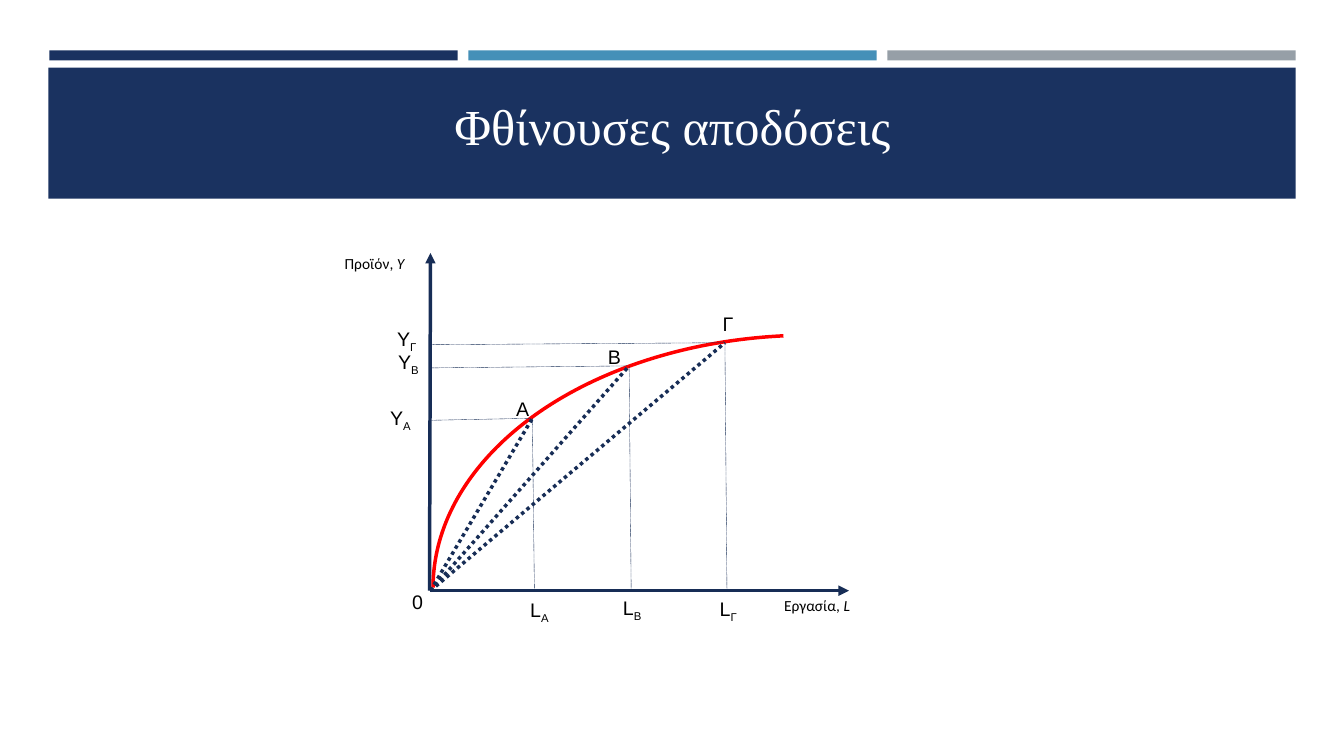
from lxml import etree
from pptx import Presentation
from pptx.dml.color import RGBColor
from pptx.enum.dml import MSO_LINE
from pptx.enum.shapes import MSO_CONNECTOR, MSO_SHAPE
from pptx.enum.text import MSO_ANCHOR, PP_ALIGN
from pptx.oxml.ns import qn
from pptx.util import Inches, Pt

NAVY = RGBColor(0x1A, 0x32, 0x60)
BLUE = RGBColor(0x45, 0x90, 0xB8)
GRAY = RGBColor(0x96, 0x9F, 0xA7)
INK = RGBColor(0x17, 0x2D, 0x56)
RED = RGBColor(0xFF, 0x00, 0x00)
BLACK = RGBColor(0x00, 0x00, 0x00)
WHITE = RGBColor(0xFF, 0xFF, 0xFF)
RECTANGLE, ARC = MSO_SHAPE.RECTANGLE, MSO_SHAPE.ARC
STRAIGHT = MSO_CONNECTOR.STRAIGHT
DOTS, DASHES = MSO_LINE.ROUND_DOT, MSO_LINE.SQUARE_DOT
LEFT, CENTER, RIGHT = PP_ALIGN.LEFT, PP_ALIGN.CENTER, PP_ALIGN.RIGHT
TOP, BOTTOM = MSO_ANCHOR.TOP, MSO_ANCHOR.BOTTOM


class DiagramSlide:
    """Draws bars, curves, lines and labels on one slide."""

    def __init__(self, slide):
        self.shapes = slide.shapes

    def bar(self, left, top, width, height, color):
        bar = self.shapes.add_shape(RECTANGLE, *map(Inches, (left, top, width, height)))
        bar.shadow.inherit = False
        bar.fill.solid()
        bar.fill.fore_color.rgb = color
        bar.line.fill.background()

    def curve(self, left, top, width, height, start, end):
        curve = self.shapes.add_shape(ARC, *map(Inches, (left, top, width, height)))
        curve.shadow.inherit = False
        curve.rotation = 270
        curve.adjustments[0] = start
        curve.adjustments[1] = end
        curve.fill.background()
        curve.line.color.rgb = RED
        curve.line.width = Pt(2.5)

    def line(self, start, end, width=2.5, dash=None, arrow=False):
        line = self.shapes.add_connector(STRAIGHT, *map(Inches, (*start, *end)))
        line.line.color.rgb = INK
        line.line.width = Pt(width)
        if dash:
            line.line.dash_style = dash
        properties = line._element.spPr
        if arrow:
            etree.SubElement(properties.find(qn("a:ln")), qn("a:tailEnd"), type="triangle")
        etree.SubElement(properties, qn("a:effectLst"))

    def text(self, left, top, width, height, words, font="Arial", size=14,
             color=BLACK, align=LEFT, anchor=TOP, subscript="", italic=""):
        frame = self.shapes.add_textbox(*map(Inches, (left, top, width, height))).text_frame
        frame.word_wrap = True
        frame.vertical_anchor = anchor
        paragraph = frame.paragraphs[0]
        paragraph.alignment = align
        paragraph.font.name = font
        paragraph.font.size = Pt(size)
        paragraph.font.color.rgb = color
        paragraph.add_run().text = words
        if subscript:
            lowered = paragraph.add_run()
            lowered.text = subscript
            lowered._r.get_or_add_rPr().set("baseline", "-25000")
        if italic:
            slanted = paragraph.add_run()
            slanted.text = italic
            slanted.font.italic = True

    def label(self, place, words, subscript=""):
        self.text(*place, 0.5, 0.34, words, subscript=subscript)

    def axis_title(self, left, top, words, symbol):
        self.text(left, top, 1.18, 0.29, words, "Calibri", 11, align=RIGHT, italic=symbol)


def main():
    deck = Presentation()
    deck.slide_width, deck.slide_height = Inches(13.33), Inches(7.5)
    diagram = DiagramSlide(deck.slides.add_slide(deck.slide_layouts[6]))

    for column, color in enumerate((NAVY, BLUE, GRAY)):
        diagram.bar(0.49 + column * 4.155, 0.5, 4.05, 0.1, color)
    diagram.bar(0.48, 0.67, 12.37, 1.3, NAVY)
    diagram.text(0.64, 0.77, 12.06, 0.82, "Φθίνουσες αποδόσεις",
                 "Times New Roman", 36, WHITE, CENTER, BOTTOM)

    origin = (4.27, 5.86)
    diagram.line((4.26, 5.86), (4.27, 2.51), arrow=True)
    diagram.line(origin, (8.42, 5.86), arrow=True)
    diagram.curve(5.53, 2.09, 5.01, 7.48, 162, 212.37)
    diagram.axis_title(2.93, 2.47, "Προϊόν, ", "Υ")
    diagram.axis_title(7.35, 5.86, "Εργασία, ", "L")

    points = (
        ((5.28, 4.15), "Α", (5.02, 3.89), "A", (5.16, 5.88), "A", (3.77, 3.98)),
        ((6.24, 3.63), "Β", (5.93, 3.37), "B", (6.08, 5.86), "Β", (3.85, 3.42)),
        ((7.19, 3.4), "Γ", (7.07, 3.05), "Γ", (7.04, 5.87), "Γ", (3.84, 3.19)),
    )
    for point, name, name_at, labor, labor_at, output, output_at in points:
        x, y = point
        diagram.line(origin, point, dash=DOTS)
        diagram.line(point, (x + 0.02, 5.84), 0.25, DASHES)
        diagram.line((x - 0.02, y), (4.26, y + 0.02), 0.25, DASHES)
        diagram.label(name_at, name)
        diagram.label(labor_at, "L", labor)
        diagram.label(output_at, "Υ", output)
    diagram.label((3.99, 5.8), "0")

    deck.save("out.pptx")


if __name__ == "__main__":
    main()
